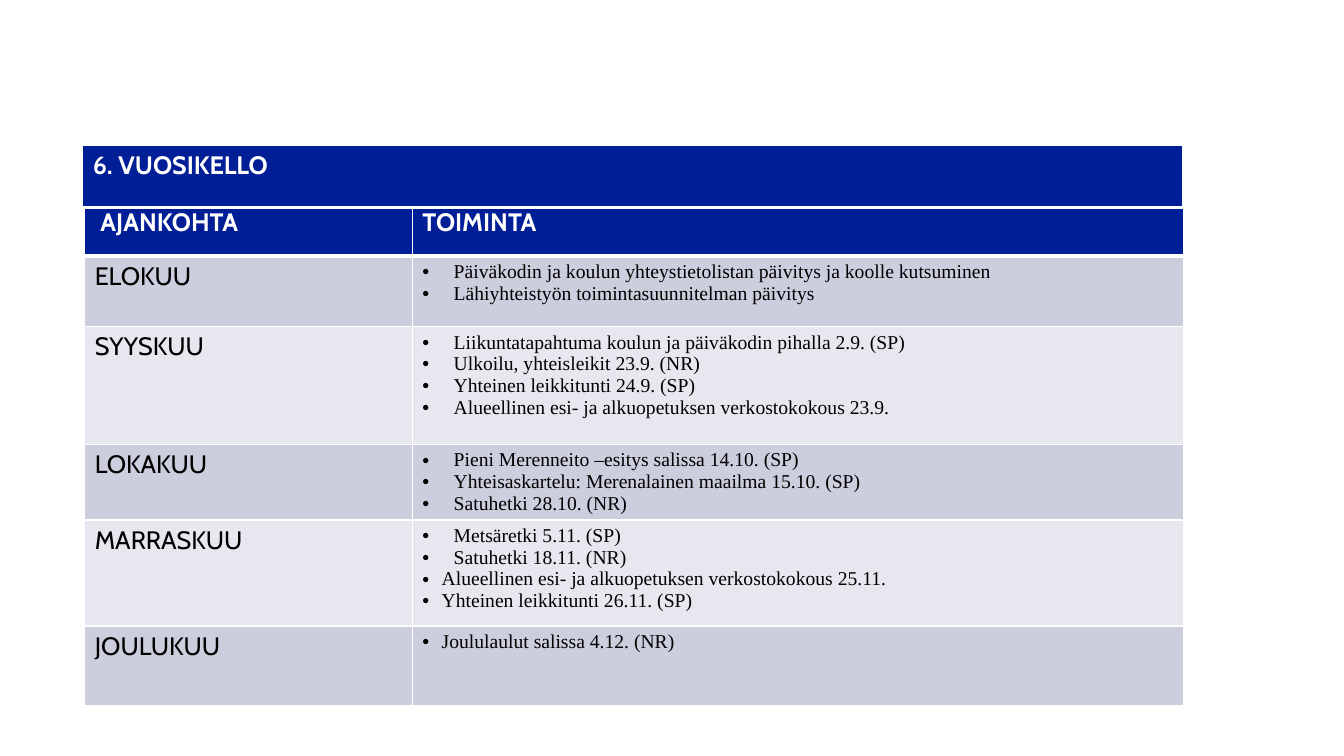
from dataclasses import dataclass

from lxml.etree import SubElement
from pptx import Presentation
from pptx.dml.color import RGBColor
from pptx.oxml import parse_xml
from pptx.oxml.ns import nsdecls, qn
from pptx.slide import Slide
from pptx.table import Table, _Cell
from pptx.util import Inches, Pt


@dataclass(frozen=True)
class Theme:
    label_font: str = "Cabin"
    activity_font: str = "Times New Roman"
    label_size: int = 18
    activity_size: int = 14
    header_fill: str = "001E96"
    band_fills: tuple[str, str] = ("CCCDDD", "E7E8EF")
    header_text: str = "FFFFFF"
    body_text: str = "000000"
    border: str = "FFFFFF"
    thin_border: int = 1
    thick_border: int = 3


@dataclass(frozen=True)
class Activity:
    text: str
    indent: float = 0.31


@dataclass(frozen=True)
class Month:
    name: str
    height: float
    activities: tuple[Activity, ...]


THEME = Theme()
NARROW_INDENT = 0.19
HEADER_HEIGHT = 0.53
COLUMN_WIDTHS = (3.25, 7.65)
MONTHS = (
    Month("ELOKUU", 0.7, (
        Activity("Päiväkodin ja koulun yhteystietolistan päivitys ja koolle kutsuminen"),
        Activity("Lähiyhteistyön toimintasuunnitelman päivitys"),
    )),
    Month("SYYSKUU", 1.17, (
        Activity("Liikuntatapahtuma koulun ja päiväkodin pihalla 2.9. (SP)"),
        Activity("Ulkoilu, yhteisleikit 23.9. (NR)"),
        Activity("Yhteinen leikkitunti 24.9. (SP)"),
        Activity("Alueellinen esi- ja alkuopetuksen verkostokokous 23.9."),
    )),
    Month("LOKAKUU", 0.75, (
        Activity("Pieni Merenneito –esitys salissa 14.10. (SP)"),
        Activity("Yhteisaskartelu: Merenalainen maailma 15.10. (SP)"),
        Activity("Satuhetki 28.10. (NR)"),
    )),
    Month("MARRASKUU", 1.05, (
        Activity("Metsäretki 5.11. (SP)"),
        Activity("Satuhetki 18.11. (NR)"),
        Activity("Alueellinen esi- ja alkuopetuksen verkostokokous 25.11.", NARROW_INDENT),
        Activity("Yhteinen leikkitunti 26.11. (SP)", NARROW_INDENT),
    )),
    Month("JOULUKUU", 0.79, (
        Activity("Joululaulut salissa 4.12. (NR)", NARROW_INDENT),
    )),
)


def add_plain_table(slide: Slide, left: float, top: float,
                    widths: tuple[float, ...], heights: tuple[float, ...]) -> Table:
    table = slide.shapes.add_table(
        len(heights), len(widths), Inches(left), Inches(top),
        Inches(sum(widths)), Inches(sum(heights))).table
    table.first_row = False
    table.horz_banding = False
    for column, width in zip(table.columns, widths):
        column.width = Inches(width)
    for row, height in zip(table.rows, heights):
        row.height = Inches(height)
    return table


def style_cell(cell: _Cell, fill: str, top: int, bottom: int) -> None:
    cell.fill.solid()
    cell.fill.fore_color.rgb = RGBColor.from_string(fill)
    properties = cell._tc.get_or_add_tcPr()
    sides = (("lnL", THEME.thin_border), ("lnR", THEME.thin_border),
             ("lnT", top), ("lnB", bottom))
    for position, (side, width) in enumerate(sides):
        properties.insert(position, parse_xml(
            f'<a:{side} {nsdecls("a")} w="{Pt(width)}"><a:solidFill>'
            f'<a:srgbClr val="{THEME.border}"/></a:solidFill></a:{side}>'))


def write_label(cell: _Cell, text: str, color: str, bold: bool) -> None:
    paragraph = cell.text_frame.paragraphs[0]
    paragraph.text = text
    paragraph.font.name = THEME.label_font
    paragraph.font.size = Pt(THEME.label_size)
    paragraph.font.bold = bold
    paragraph.font.color.rgb = RGBColor.from_string(color)


def write_header(cell: _Cell, text: str) -> None:
    style_cell(cell, THEME.header_fill, THEME.thin_border, THEME.thick_border)
    write_label(cell, text, THEME.header_text, True)


def write_activities(cell: _Cell, activities: tuple[Activity, ...]) -> None:
    frame = cell.text_frame
    for index, activity in enumerate(activities):
        paragraph = frame.add_paragraph() if index else frame.paragraphs[0]
        paragraph.text = activity.text
        properties = paragraph._p.get_or_add_pPr()
        properties.set("marL", str(Inches(activity.indent)))
        properties.set("indent", str(-Inches(activity.indent)))
        SubElement(properties, qn("a:buFont"), typeface="Arial")
        SubElement(properties, qn("a:buChar"), char="•")
        paragraph.font.name = THEME.activity_font
        paragraph.font.size = Pt(THEME.activity_size)
        paragraph.font.color.rgb = RGBColor.from_string(THEME.body_text)


def add_calendar(slide: Slide) -> None:
    heights = (HEADER_HEIGHT, *(month.height for month in MONTHS))
    table = add_plain_table(slide, 0.84, 2.01, COLUMN_WIDTHS, heights)
    for column, text in enumerate((" AJANKOHTA", "TOIMINTA")):
        write_header(table.cell(0, column), text)
    for index, month in enumerate(MONTHS):
        name_cell, activity_cell = table.rows[index + 1].cells
        top = THEME.thin_border if index else THEME.thick_border
        for cell in (name_cell, activity_cell):
            style_cell(cell, THEME.band_fills[index % 2], top, THEME.thin_border)
        write_label(name_cell, month.name, THEME.body_text, False)
        write_activities(activity_cell, month.activities)


def add_heading(slide: Slide) -> None:
    table = add_plain_table(slide, 0.82, 1.44, (10.91,), (0.62,))
    write_header(table.cell(0, 0), "6. VUOSIKELLO")


def main() -> None:
    presentation = Presentation()
    presentation.slide_width = Inches(13.33)
    presentation.slide_height = Inches(7.5)
    slide = presentation.slides.add_slide(presentation.slide_layouts[6])
    add_calendar(slide)
    add_heading(slide)
    presentation.save("out.pptx")


if __name__ == "__main__":
    main()
